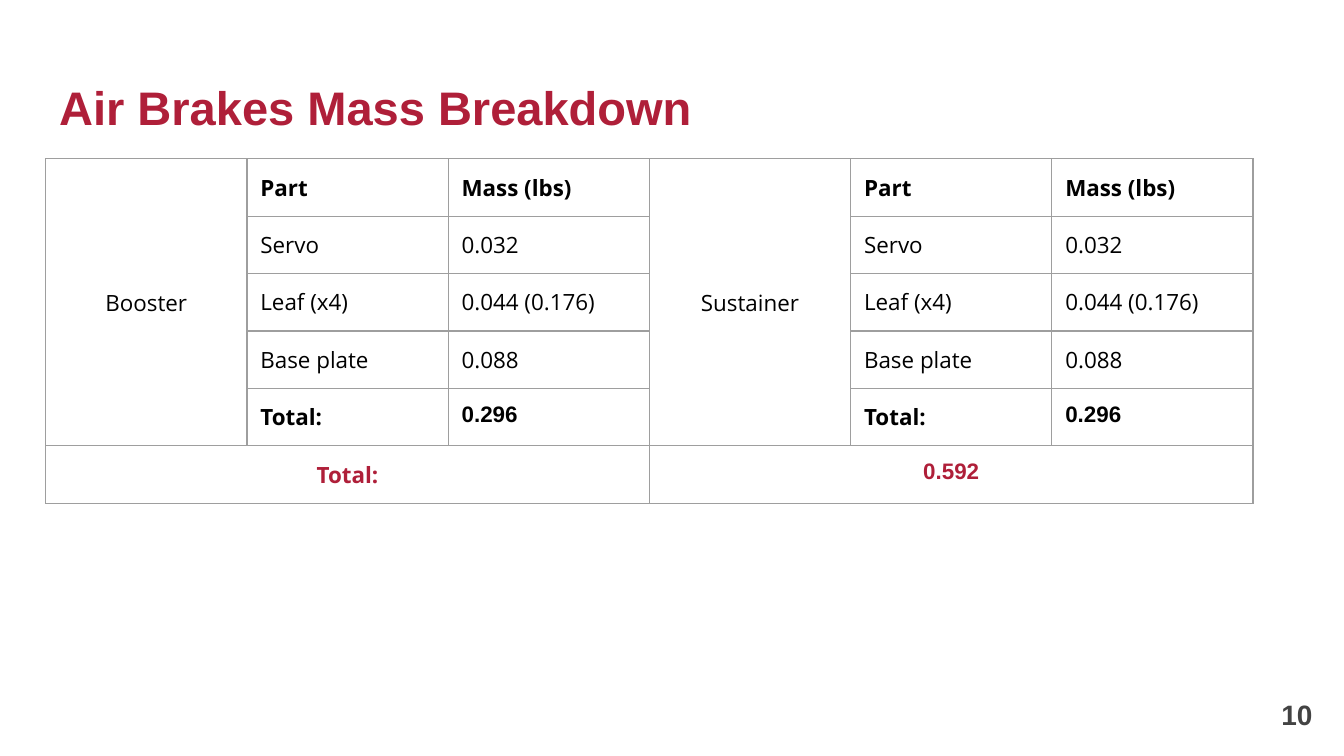
from dataclasses import dataclass
from itertools import product

from lxml.etree import SubElement as Sub
from pptx import Presentation
from pptx.dml.color import RGBColor as RGB
from pptx.enum.text import MSO_ANCHOR as Anchor, MSO_AUTO_SIZE as Auto, PP_ALIGN as Align
from pptx.oxml.ns import qn
from pptx.util import Inches, Pt


@dataclass(frozen=True)
class Theme:
    red: str = "AF1F39"
    black: str = "000000"
    gray: str = "434343"
    rule: str = "9E9E9E"
    head: str = "Arial"
    body: str = "Open Sans"
    big: float = 25.2
    mid: float = 15
    small: float = 12
    line: float = 0.75
    pad: float = 0.1


T = Theme()
WIDE = 10
HIGH = WIDE * 9 / 16
STAGES = ["Booster", "Sustainer"]
PARTS = [
    ("Part", "Mass (lbs)"),
    ("Servo", "0.032"),
    ("Leaf (x4)", "0.044 (0.176)"),
    ("Base plate", "0.088"),
    ("Total:", "0.296"),
]
SUMS = ["Total:", "0.592"]


def area(x, y, w, h):
    """Turn percent of the slide's size into inches."""
    return [x * WIDE / 100, y * HIGH / 100, w * WIDE / 100, h * HIGH / 100]


def write(frame, text, size, color, face, bold=False, align=Align.LEFT):
    para = frame.paragraphs[0]
    para.alignment = align
    run = para.add_run()
    run.text = text
    look = dict(size=Pt(size), name=face, bold=bold)
    for key, val in look.items():
        setattr(run.font, key, val)
    run.font.color.rgb = RGB.from_string(color)


def place(shape, box, anchor):
    for key, val in zip(("left", "top", "width", "height"), box):
        setattr(shape, key, Inches(val))
    look = dict(word_wrap=True, auto_size=Auto.NONE, vertical_anchor=anchor)
    look |= {f"margin_{side}": Inches(T.pad) for side in ("left", "right", "top", "bottom")}
    for key, val in look.items():
        setattr(shape.text_frame, key, val)


def head(slide, box, text):
    title = slide.shapes.title
    place(title, box, Anchor.TOP)
    write(title.text_frame, text, T.big, T.red, T.head, True)


def folio(slide, box, text):
    """Put the page number at the right of its box."""
    label = slide.shapes.add_textbox(0, 0, 0, 0)
    place(label, box, Anchor.MIDDLE)
    write(label.text_frame, text, T.mid, T.gray, T.head, True, Align.RIGHT)


def frame(cell):
    """Give a cell its padding, thin rules and clear fill."""
    for side in ("left", "right", "top", "bottom"):
        setattr(cell, f"margin_{side}", Inches(T.pad))
    props = cell._tc.get_or_add_tcPr()
    for side in "LRTB":
        edge = Sub(props, qn(f"a:ln{side}"), w=str(Pt(T.line)))
        Sub(Sub(edge, qn("a:solidFill")), qn("a:srgbClr"), val=T.rule)
    cell.fill.background()


def masses(slide, box):
    rows, span = len(PARTS) + 1, 1 + len(PARTS[0])
    cols = span * len(STAGES)
    table = slide.shapes.add_table(rows, cols, *map(Inches, box)).table
    table.first_row = table.horz_banding = False
    for row in table.rows:
        row.height = Inches(box[3] / rows)
    for col in table.columns:
        col.width = Inches(box[2] / cols)
    for r, c in product(range(rows), range(cols)):
        frame(table.cell(r, c))

    def put(r, c, text, color=T.black, **look):
        # Bold figures are set in the heading face
        face = T.head if look.get("bold") and text[0].isdigit() else T.body
        write(table.cell(r, c).text_frame, text, T.small, color, face, **look)

    last = rows - 1
    for n, (stage, total) in enumerate(zip(STAGES, SUMS)):
        left = n * span
        name, foot = table.cell(0, left), table.cell(last, left)
        name.merge(table.cell(last - 1, left))
        foot.merge(table.cell(last, left + span - 1))
        name.vertical_anchor = Anchor.MIDDLE
        foot.vertical_anchor = Anchor.TOP if total[0].isdigit() else Anchor.MIDDLE
        put(0, left, stage, align=Align.CENTER)
        put(last, left, total, T.red, bold=True, align=Align.CENTER)
        for r, pair in enumerate(PARTS):
            for c, text in enumerate(pair, left + 1):
                put(r, c, text, bold=r in (0, last - 1))


def main():
    deck = Presentation()
    deck.slide_width, deck.slide_height = Inches(WIDE), Inches(HIGH)
    slide = deck.slides.add_slide(deck.slide_layouts[5])
    head(slide, area(3.4, 8.65, 93.2, 11.2), "Air Brakes Mass Breakdown")
    masses(slide, area(3.4, 21, 89.85, 45.4))
    folio(slide, area(92.65, 90.67, 6, 7.64), "10")
    deck.save("out.pptx")


if __name__ == "__main__":
    main()
